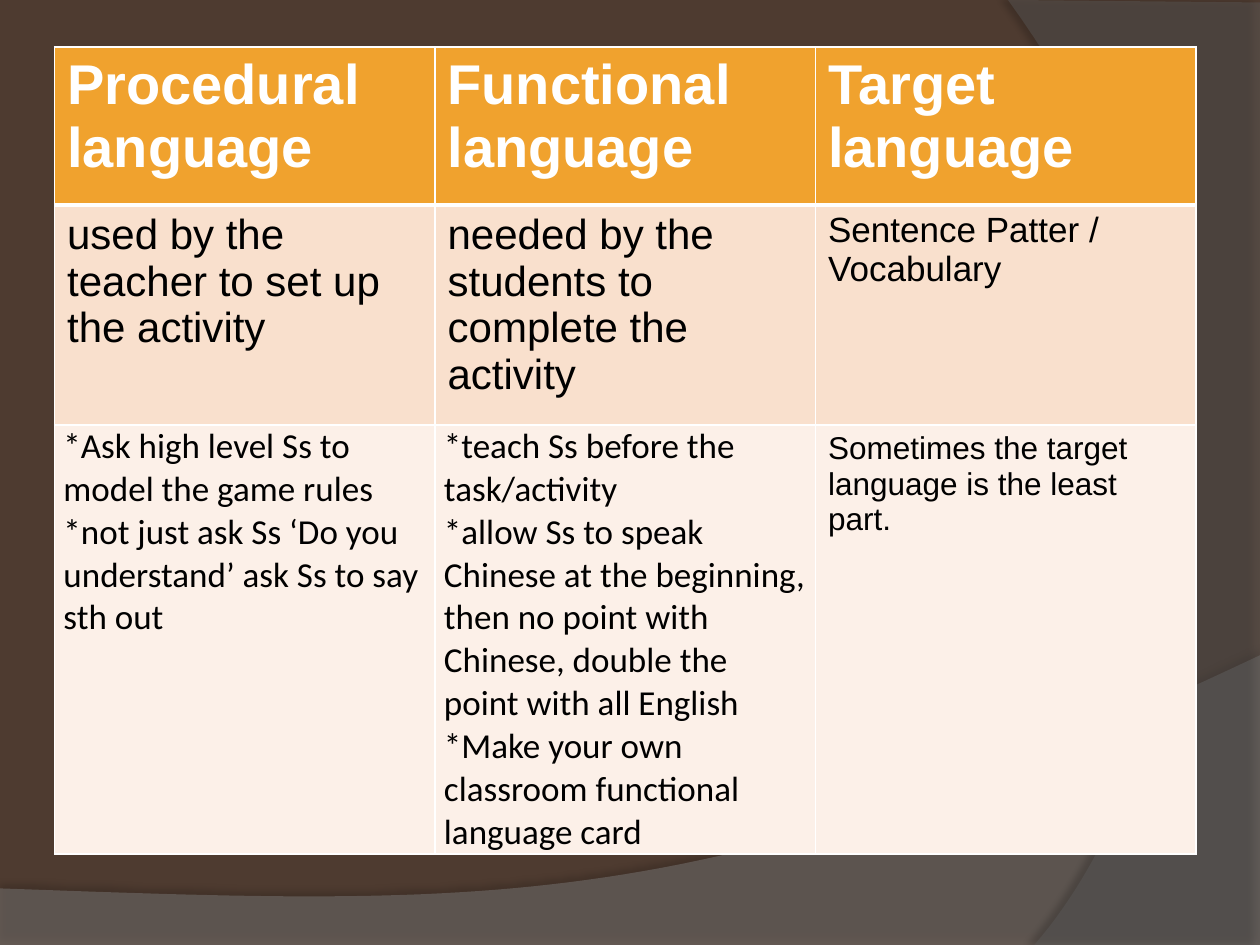
"""Build a slide with a table comparing three kinds of classroom language."""
from lxml.etree import SubElement
from pptx import Presentation
from pptx.dml.color import RGBColor
from pptx.oxml import parse_xml
from pptx.oxml.ns import nsdecls, qn
from pptx.util import Cm, Pt

COLORS = {
    "background": "4E3B30", "wave": "7F7F7F", "curve": "5E5E5E",
    "shadow": "000000", "border": "FFFFFF", "heading": "FFFFFF",
    "text": "000000", "header": "F0A22E", "odd": "F9E0CD", "even": "FCF0E8",
}

HEADING = {"size": Pt(32), "name": "Arial", "bold": True}
LARGE = {"size": Pt(24), "name": "Arial", "bold": False}
MEDIUM = {"size": Pt(20), "name": "Arial", "bold": False}
SMALL = {"size": Pt(18), "name": "Arial", "bold": False}
NOTES = {"size": Pt(20), "name": "Calibri", "bold": False}
NOTE_MARGINS = {
    "margin_left": Cm(0.18), "margin_right": Cm(0.18),
    "margin_top": Cm(0), "margin_bottom": Cm(0),
}

ROWS = [
    ("header", "heading", Cm(3.18), [
        (HEADING, ["Procedural language"]),
        (HEADING, ["Functional language"]),
        (HEADING, ["Target language"]),
    ]),
    ("odd", "text", Cm(4.44), [
        (LARGE, ["used by the teacher to set up the activity"]),
        (LARGE, ["needed by the students to complete the activity"]),
        (MEDIUM, ["Sentence Patter / Vocabulary"]),
    ]),
    ("even", "text", Cm(8.31), [
        (NOTES, [
            "*Ask high level Ss to model the game rules",
            "*not just ask Ss ‘Do you understand’ ask Ss to say sth out",
        ]),
        (NOTES, [
            "*teach Ss before the task/activity",
            "*allow Ss to speak Chinese at the beginning, then no point with "
            "Chinese, double the point with all English",
            "*Make your own classroom functional language card",
        ]),
        (SMALL, ["Sometimes the target language is the least part."]),
    ]),
]


def set_values(target, values):
    """Set each named attribute of the target."""
    for name, value in values.items():
        setattr(target, name, value)


def color(name):
    """Return a palette colour."""
    return RGBColor.from_string(COLORS[name])


def bezier(start, first, second, end, steps=60):
    """Return points along a cubic curve, after its start."""
    points = []
    for step in range(1, steps + 1):
        t = step / steps
        weights = ((1 - t) ** 3, 3 * t * (1 - t) ** 2, 3 * t ** 2 * (1 - t), t ** 3)
        points.append(tuple(
            sum(weight * value for weight, value in zip(weights, axis))
            for axis in zip(start, first, second, end)
        ))
    return points


def add_band(page, corners, controls, end, fill, opacity, shadow):
    """Add a translucent background shape with one curved edge."""
    points = corners + bezier(corners[-1], *controls, end)
    points = [(Cm(x), Cm(y)) for x, y in points]
    builder = page.shapes.build_freeform(*points[0])
    builder.add_line_segments(points[1:], close=True)
    band = builder.convert_to_shape()
    band.fill.solid()
    band.fill.fore_color.rgb = color(fill)
    band.line.fill.background()
    properties = band.fill._xPr
    tint = properties.find(qn("a:solidFill")).find(qn("a:srgbClr"))
    SubElement(tint, qn("a:alpha"), val=str(opacity * 1000))
    strength, blur, distance, angle = shadow
    properties.append(parse_xml(
        f'<a:effectLst {nsdecls("a")}><a:outerShdw blurRad="{Pt(blur)}" '
        f'dist="{Pt(distance)}" dir="{angle * 60000}" algn="ctr" rotWithShape="0">'
        f'<a:srgbClr val="{COLORS["shadow"]}"><a:alpha val="{strength * 1000}"/>'
        '</a:srgbClr></a:outerShdw></a:effectLst>'
    ))


def set_borders(cell, widths):
    """Draw solid borders of the given point widths around a cell."""
    properties = cell._tc.get_or_add_tcPr()
    for index, (side, width) in enumerate(widths.items()):
        properties.insert(index, parse_xml(
            f'<a:ln{side} {nsdecls("a")} w="{Pt(width)}"><a:solidFill>'
            f'<a:srgbClr val="{COLORS["border"]}"/></a:solidFill></a:ln{side}>'
        ))


def fill_cell(cell, lines, font, text_color, fill):
    """Write the lines into a cell and format it."""
    cell.fill.solid()
    cell.fill.fore_color.rgb = color(fill)
    if font is NOTES:
        set_values(cell, NOTE_MARGINS)
    frame = cell.text_frame
    for index, line in enumerate(lines):
        para = frame.add_paragraph() if index else frame.paragraphs[0]
        span = para.add_run()
        span.text = line
        set_values(span.font, font)
        span.font.color.rgb = color(text_color)


def add_language_table(page):
    """Add the table of language kinds."""
    column_width = Cm(7.67)
    height = sum(row[2] for row in ROWS)
    frame = page.shapes.add_table(
        len(ROWS), 3, Cm(1.1), Cm(0.95), column_width * 3, height
    )
    table = frame.table
    for column in table.columns:
        column.width = column_width
    for index, (fill, text_color, row_height, cells) in enumerate(ROWS):
        table.rows[index].height = row_height
        widths = {"L": 1, "R": 1, "T": 3 if index == 1 else 1,
                  "B": 3 if index == 0 else 1}
        for cell, (font, lines) in zip(table.rows[index].cells, cells):
            fill_cell(cell, lines, font, text_color, fill)
            set_borders(cell, widths)


def main():
    """Build and save the deck."""
    deck = Presentation()
    set_values(deck, {"slide_width": Cm(25.4), "slide_height": Cm(19.05)})
    page = deck.slides.add_slide(deck.slide_layouts[6])
    page.background.fill.solid()
    page.background.fill.fore_color.rgb = color("background")
    add_band(
        page, [(0, 17.91), (0, 19.05), (25.4, 19.05), (25.4, 13.21)],
        [(14.2, 18.52), (9.93, 18.26)], (0, 17.91),
        "wave", 45, (35, 4, 3.5, 270),
    )
    add_band(
        page, [(25.4, 0.05), (25.4, 19.05), (20.85, 19.05)],
        [(23.75, 15.72), (25.86, 7.62)], (20.32, 0),
        "curve", 40, (45, 4, 4, 180),
    )
    add_language_table(page)
    deck.save("out.pptx")


if __name__ == "__main__":
    main()
